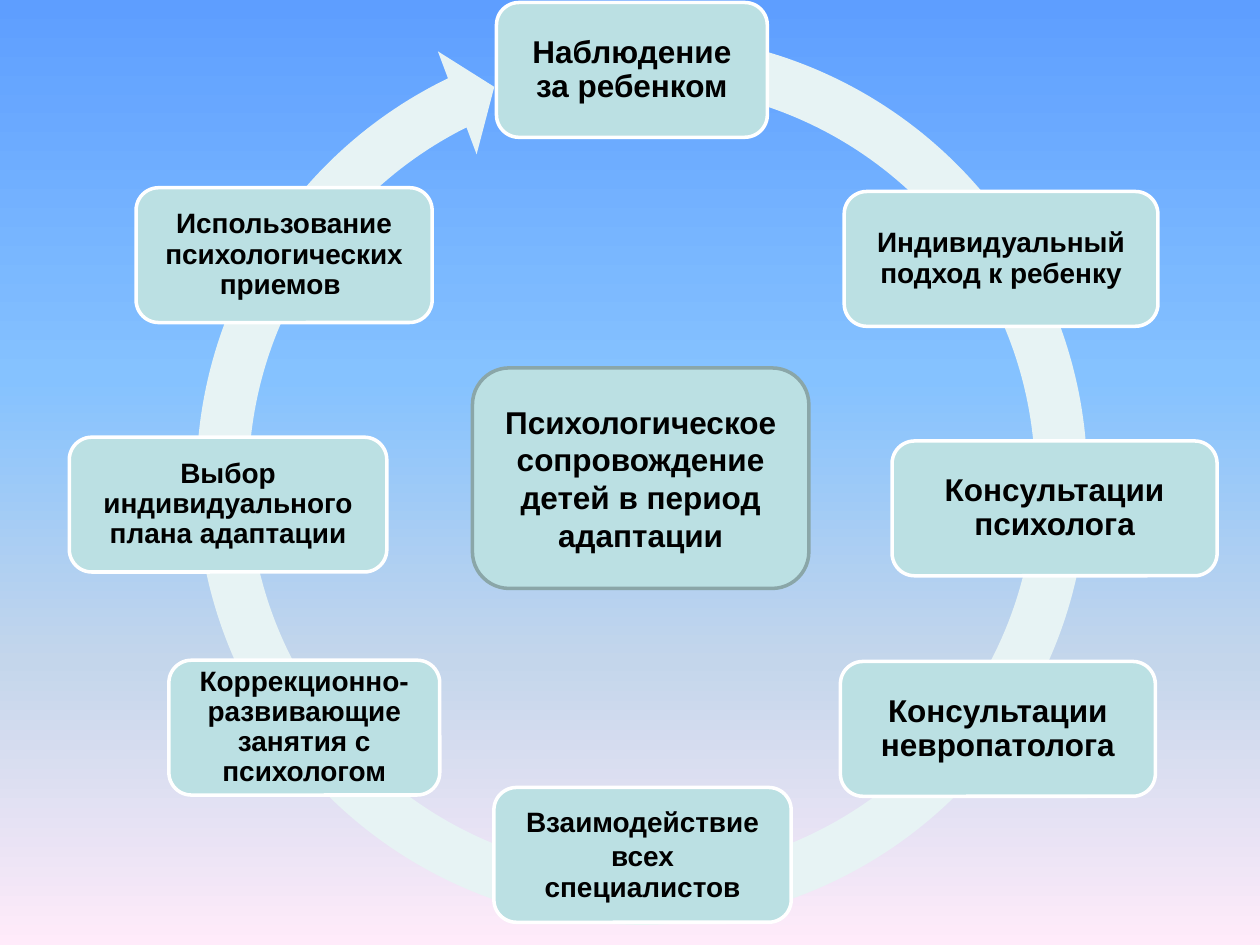
from copy import deepcopy

from pptx import Presentation
from pptx.dml.color import RGBColor
from pptx.enum.shapes import MSO_SHAPE as Shape
from pptx.enum.text import MSO_ANCHOR as Anchor, PP_ALIGN as Align
from pptx.oxml.ns import qn
from pptx.util import Inches, Pt

BLACK = RGBColor(0x00, 0x00, 0x00)
WHITE = RGBColor(0xFF, 0xFF, 0xFF)
MINT = RGBColor(0xBB, 0xE0, 0xE3)
PALE_MINT = RGBColor(0xE7, 0xF3, 0xF4)
GREY_GREEN = RGBColor(0x8A, 0xA6, 0xA8)
SKY = [
    (0, RGBColor(0x5E, 0x9E, 0xFF)),
    (0.4, RGBColor(0x85, 0xC2, 0xFF)),
    (0.7, RGBColor(0xC4, 0xD6, 0xEB)),
    (1, RGBColor(0xFF, 0xEB, 0xFA)),
]
COLUMNS, ROWS = 100, 75
STEP_ROWS = 10.7
RING_ADJUSTMENTS = (0.055, 3.307, 146.328, 168.836, 0.058)

STEPS = [
    (39.4, 0.2, 21.5, [("Наблюдение за ребенком", 18)]),
    (67, 15.2, 24.9, [("Индивидуальный подход к ребенку", 16)]),
    (70.8, 35, 25.8, [("Консультации психолога", 18)]),
    (66.7, 52.5, 25, [("Консультации невропатолога", 18)]),
    (39.2, 62.5, 23.6, [("Взаимодействие", 16), (" ", 18), ("всех", 16),
                        (" ", 18), ("специалистов", 16)]),
    (13.4, 52.4, 21.5, [("Коррекционно-развивающие занятия с психологом", 16)]),
    (5.5, 34.7, 25.2, [("Выбор индивидуального плана адаптации", 16)]),
    (10.8, 14.9, 23.5, [("Использование психологических приемов ", 16)]),
]
TOPIC = [("Психологическое сопровождение детей в период адаптации", 18)]


class CycleSlide:
    """Draws the parts of a cycle on one slide, measured in grid columns and rows."""

    font = "Arial"
    outline = Pt(2)
    step_inset = Inches(0.07)

    def __init__(self, deck):
        self.column = deck.slide_width / COLUMNS
        self.row = deck.slide_height / ROWS
        self.slide = deck.slides.add_slide(deck.slide_layouts[6])

    def background(self, stops):
        fill = self.slide.background.fill
        fill.gradient()
        fill.gradient_angle = 270
        stop_list = next(self.slide.element.iter(qn("a:gsLst")))
        while len(stop_list) < len(stops):
            stop_list.append(deepcopy(stop_list[0]))
        for stop, (position, color) in zip(fill.gradient_stops, stops):
            stop.position = position
            stop.color.rgb = color

    def figure(self, kind, left, top, width, height, color):
        figure = self.slide.shapes.add_shape(
            kind, round(left * self.column), round(top * self.row),
            round(width * self.column), round(height * self.row))
        figure.shadow.inherit = False
        figure.fill.solid()
        figure.fill.fore_color.rgb = color
        return figure

    def ring(self, left, top, size):
        ring = self.figure(Shape.CIRCULAR_ARROW, left, top, size, size, PALE_MINT)
        ring.line.fill.background()
        for index, value in enumerate(RING_ADJUSTMENTS):
            ring.adjustments[index] = value

    def card(self, left, top, width, height, wording, border):
        card = self.figure(Shape.ROUNDED_RECTANGLE, left, top, width, height, MINT)
        card.line.color.rgb = border
        card.line.width = self.outline
        frame = card.text_frame
        frame.word_wrap = True
        frame.vertical_anchor = Anchor.MIDDLE
        paragraph = frame.paragraphs[0]
        paragraph.alignment = Align.CENTER
        for text, size in wording:
            run = paragraph.add_run()
            run.text = text
            run.font.name = self.font
            run.font.size = Pt(size)
            run.font.bold = True
            run.font.color.rgb = BLACK
        return frame

    def step(self, left, top, width, wording):
        frame = self.card(left, top, width, STEP_ROWS, wording, WHITE)
        frame.margin_left = frame.margin_right = self.step_inset
        frame.margin_top = frame.margin_bottom = self.step_inset
        frame.paragraphs[0].line_spacing = 0.9
        frame.paragraphs[0].space_after = Pt(6)


def main():
    deck = Presentation()
    deck.slide_width, deck.slide_height = Inches(10), Inches(7.5)
    cycle = CycleSlide(deck)
    cycle.background(SKY)
    cycle.ring(13.3, 0.4, 75.3)
    for step in STEPS:
        cycle.step(*step)
    cycle.card(37.5, 29.2, 26.7, 17.5, TOPIC, GREY_GREEN)
    deck.save("out.pptx")


if __name__ == "__main__":
    main()
